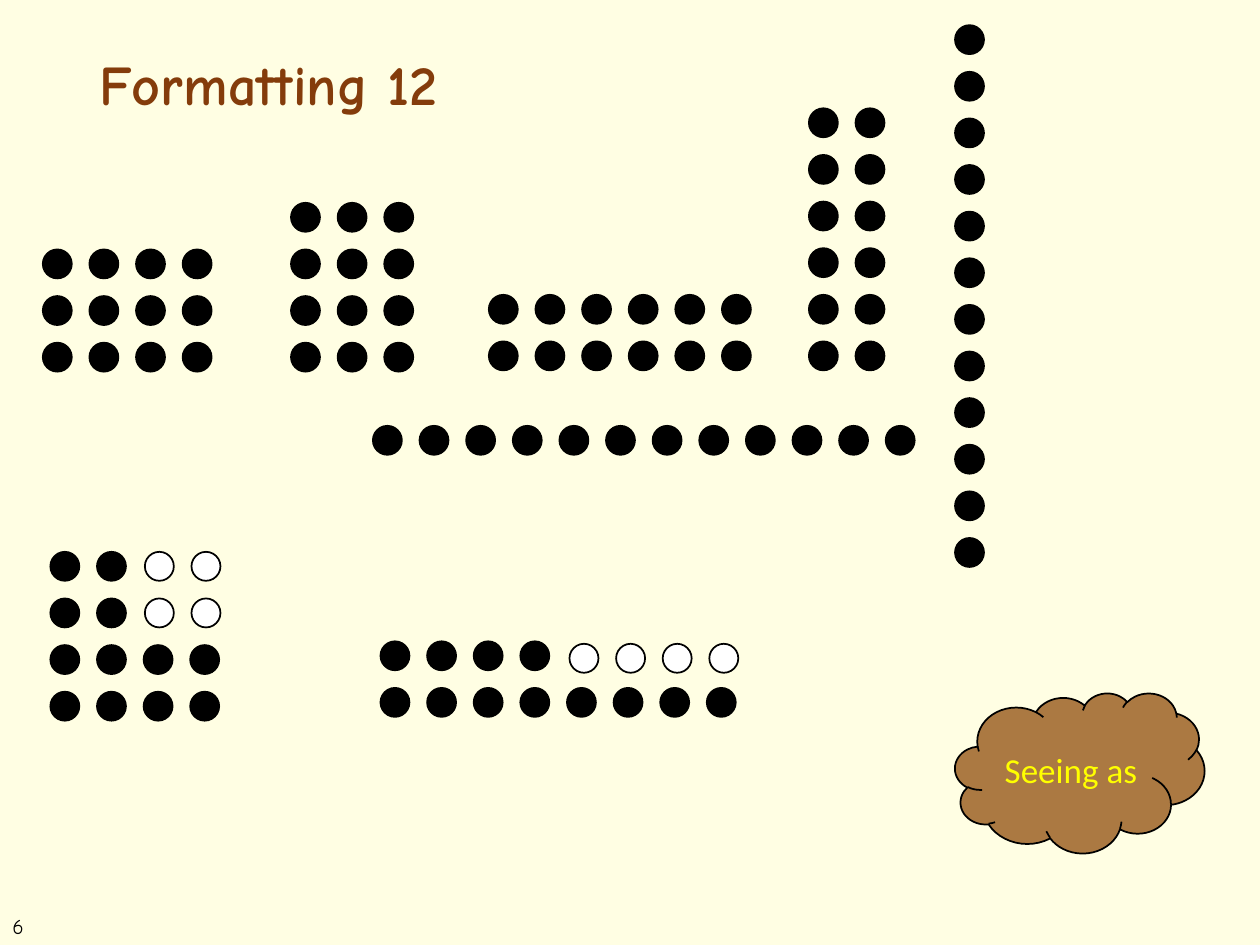
from dataclasses import dataclass

from pptx import Presentation, util as u
from pptx.dml.color import RGBColor
from pptx.enum import shapes, text

DOT = 0.23
PITCH = 0.37
BLACK, WHITE = "000000", "FFFFFF"
BACKGROUND, BROWN, TAN, YELLOW = "FFFEE3", "843C0B", "AB7942", "FFFF00"


@dataclass
class Grid:
    left: float
    top: float
    cols: int
    rows: int
    fill: str = BLACK


@dataclass
class Label:
    words: str
    box: tuple[float, float, float, float]
    fmt: dict
    color: str
    spacing: float = 1.0


ARRAYS = [
    [Grid(0.34, 1.98, 4, 3)],
    [Grid(2.31, 1.61, 3, 4)],
    [Grid(0.4, 4.38, 2, 2), Grid(0.4, 5.12, 4, 2), Grid(1.15, 4.38, 2, 2, WHITE)],
    [Grid(2.96, 3.38, 12, 1)],
    [Grid(3.02, 5.09, 4, 1), Grid(3.02, 5.46, 8, 1), Grid(4.52, 5.11, 4, 1, WHITE)],
    [Grid(3.88, 2.34, 6, 2)],
    [Grid(6.42, 0.86, 2, 6)],
    [Grid(7.58, 0.2, 1, 12)],
]
PAGE = Label("6", (0, 7.2, 0.55, 0.3),
             {"name": "Comic Neue", "size": u.Pt(12)}, BLACK)
TITLE = Label("Formatting 12", (0.69, 0.4, 8.62, 0.71),
              {"name": "Comic Neue", "size": u.Pt(32), "bold": True}, BROWN, 0.9)
CLOUD = Label("Seeing as", (7.58, 5.5, 1.98, 1.27),
              {"name": "Calibri", "size": u.Pt(20)}, YELLOW)


def rgb(value: str) -> RGBColor:
    return RGBColor.from_string(value)


def inches(box: tuple) -> list:
    return [u.Inches(v) for v in box]


def add_outlined(parent, kind, box: tuple, fill: str):
    sp = parent.add_shape(kind, *inches(box))
    sp.shadow.inherit = False
    sp.fill.solid()
    sp.fill.fore_color.rgb = rgb(fill)
    sp.line.color.rgb = rgb(BLACK)
    sp.line.width = u.Pt(1)
    return sp


def write(sp, label: Label, align, anchor) -> None:
    tf = sp.text_frame
    tf.word_wrap = True
    tf.vertical_anchor = anchor
    p = tf.paragraphs[0]
    p.alignment = align
    p.line_spacing = label.spacing
    r = p.add_run()
    r.text = label.words
    for key, value in label.fmt.items():
        setattr(r.font, key, value)
    r.font.color.rgb = rgb(label.color)


def add_label(s, label: Label) -> None:
    sp = s.shapes.add_textbox(*inches(label.box))
    write(sp, label, text.PP_ALIGN.LEFT, text.MSO_ANCHOR.TOP)


def add_array(s, grids: list[Grid]) -> None:
    group = s.shapes.add_group_shape()
    for g in grids:
        for row in range(g.rows):
            for col in range(g.cols):
                box = (g.left + col * PITCH, g.top + row * PITCH, DOT, DOT)
                add_outlined(group.shapes, shapes.MSO_SHAPE.OVAL, box, g.fill)


def add_cloud(s, label: Label) -> None:
    sp = add_outlined(s.shapes, shapes.MSO_SHAPE.CLOUD, label.box, TAN)
    write(sp, label, text.PP_ALIGN.CENTER, text.MSO_ANCHOR.MIDDLE)


def main() -> None:
    """Build the slide of dot arrays that show twelve in different ways."""
    prs = Presentation()
    prs.slide_width, prs.slide_height = u.Inches(10), u.Inches(7.5)
    s = prs.slides.add_slide(prs.slide_layouts[6])
    s.background.fill.solid()
    s.background.fill.fore_color.rgb = rgb(BACKGROUND)
    for label in (PAGE, TITLE):
        add_label(s, label)
    for grids in ARRAYS:
        add_array(s, grids)
    add_cloud(s, CLOUD)
    prs.save("out.pptx")


if __name__ == "__main__":
    main()
